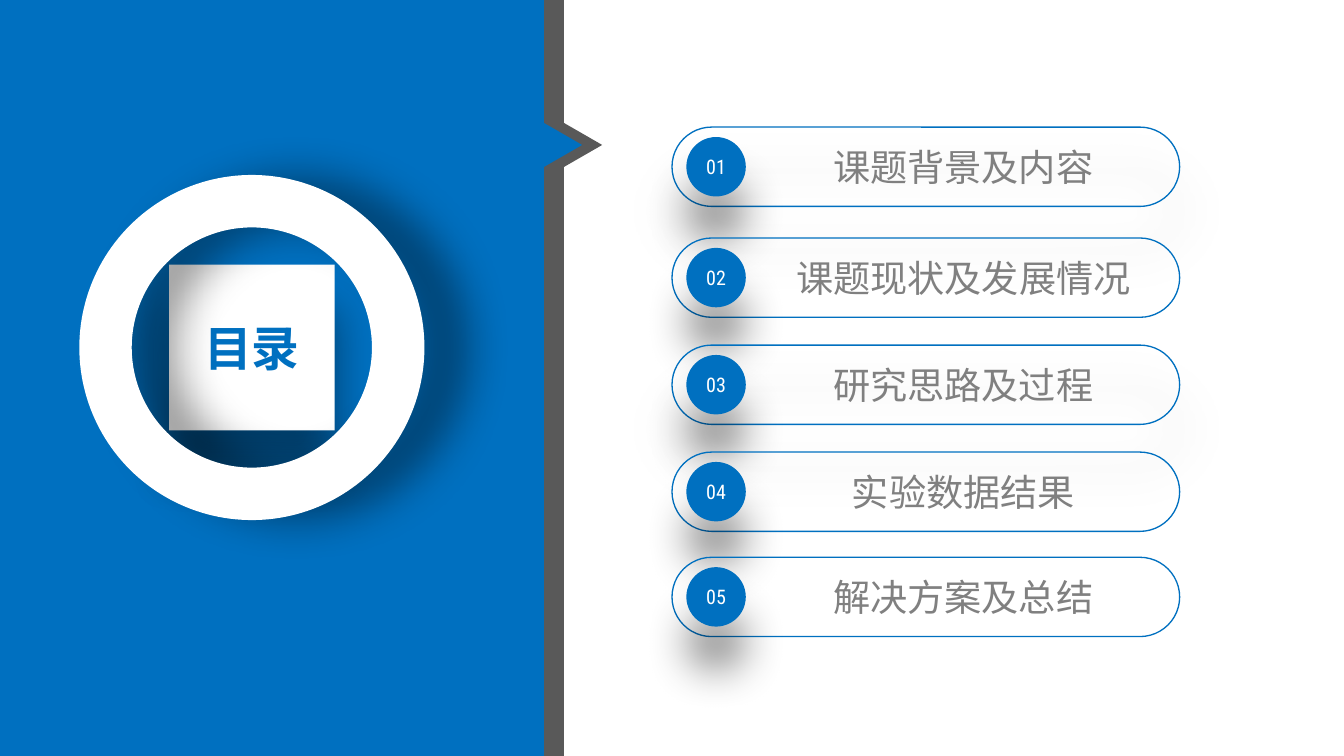
import dataclasses

import lxml.etree
import pptx
import pptx.dml.color
import pptx.enum.shapes
import pptx.enum.text
import pptx.oxml
import pptx.oxml.ns
import pptx.util

SHAPE = pptx.enum.shapes.MSO_SHAPE
WIDTH, HEIGHT = 14.06, 7.91
COLUMNS = 100  # the grid has square cells, so a row is as high as a column is wide
ROWS = COLUMNS * HEIGHT / WIDTH


@dataclasses.dataclass(frozen=True)
class Theme:
    blue: str = "0070C0"
    dark: str = "595959"
    gray: str = "808080"
    white: str = "FFFFFF"
    font: str = "Roboto Condensed"
    title_size: float = 36
    item_size: float = 28
    badge_size: float = 15.1
    line_width: float = 1
    shadow_reach: float = 33


THEME = Theme()

# label, top row of its pill, whether the pill has a shadow
ITEMS = [
    ("课题背景及内容", 9.46, True),
    ("课题现状及发展情况", 17.71, False),
    ("研究思路及过程", 25.68, True),
    ("实验数据结果", 33.64, False),
    ("解决方案及总结", 41.47, False),
]


def cells(n):
    return pptx.util.Inches(n * WIDTH / COLUMNS)


def rgb(color):
    return pptx.dml.color.RGBColor.from_string(color)


def add_shape(slide, kind, box, fill=None, line=None):
    sp = slide.shapes.add_shape(kind, *map(cells, box))
    sp.shadow.inherit = False
    if fill:
        sp.fill.solid()
        sp.fill.fore_color.rgb = rgb(fill)
    else:
        sp.fill.background()
    if line:
        sp.line.color.rgb = rgb(line)
        sp.line.width = pptx.util.Pt(THEME.line_width)
    else:
        sp.line.fill.background()
    return sp


def add_shadow(sp, angle=90, opacity=43):
    sp.shadow.inherit = False
    effects = sp.element.spPr.find(pptx.oxml.ns.qn("a:effectLst"))
    reach = pptx.util.Pt(THEME.shadow_reach)
    effects.append(pptx.oxml.parse_xml(
        f'<a:outerShdw {pptx.oxml.ns.nsdecls("a")} blurRad="{reach}" dist="{reach}" '
        f'dir="{angle * 60000}" algn="ctr" rotWithShape="0"><a:srgbClr val="000000">'
        f'<a:alpha val="{opacity * 1000}"/></a:srgbClr></a:outerShdw>'))


def write(sp, text, size, color, bold=False, margin_x=0.08, margin_y=0.04):
    tf = sp.text_frame
    tf.word_wrap = True
    tf.auto_size = pptx.enum.text.MSO_AUTO_SIZE.NONE
    tf.vertical_anchor = pptx.enum.text.MSO_ANCHOR.MIDDLE
    tf.margin_left = tf.margin_right = pptx.util.Inches(margin_x)
    tf.margin_top = tf.margin_bottom = pptx.util.Inches(margin_y)
    p = tf.paragraphs[0]
    p.text = text
    p.alignment = pptx.enum.text.PP_ALIGN.CENTER
    p.font.name = THEME.font
    p.font.size = pptx.util.Pt(size)
    p.font.bold = bold
    p.font.color.rgb = rgb(color)


def add_item(slide, box, number, label, has_shadow):
    """Pill with a numbered badge at its left end and a label."""
    left, top, width, height = box
    pill = add_shape(slide, SHAPE.ROUNDED_RECTANGLE, box, line=THEME.blue)
    pill.adjustments[0] = 0.5
    if has_shadow:
        add_shadow(pill)

    badge_side = 0.75 * height
    badge_top = top + 0.125 * height
    badge = add_shape(slide, SHAPE.OVAL,
                      (left + 1.07, badge_top, badge_side, badge_side), THEME.blue)
    add_shadow(badge)
    write(badge, f"{number:02d}", THEME.badge_size, THEME.white)

    label_box = (left + 8.46, badge_top, 0.7 * width, badge_side)
    tb = slide.shapes.add_textbox(*map(cells, label_box))
    write(tb, label, THEME.item_size, THEME.gray, margin_x=0, margin_y=0)


def add_panel(slide, box, color):
    """Full-height panel with a pointer on its right edge."""
    left, top, width, height = box
    pointer = add_shape(slide, SHAPE.ISOSCELES_TRIANGLE,
                        (left + width - 0.21, top + 9.37, 3.27, 2.84), color)
    pointer.rotation = 90
    add_shape(slide, SHAPE.RECTANGLE, box, color)


def add_medallion(slide, box, text):
    """Slide title in a disc, with a ring around it."""
    left, top, side, _ = box
    disc = 0.48 * side
    inset = (side - disc) / 2
    title = slide.shapes.title
    title.left, title.top = cells(left + inset), cells(top + inset)
    title.width = title.height = cells(disc)
    geometry = lxml.etree.SubElement(title.element.spPr, pptx.oxml.ns.qn("a:prstGeom"),
                                     prst="ellipse")
    lxml.etree.SubElement(geometry, pptx.oxml.ns.qn("a:avLst"))
    title.fill.solid()
    title.fill.fore_color.rgb = rgb(THEME.white)
    add_shadow(title)
    write(title, text, THEME.title_size, THEME.blue, bold=True)
    slide.shapes.element.append(title.element)  # in front of the panels

    ring = add_shape(slide, SHAPE.DONUT, box, THEME.white)
    ring.adjustments[0] = 0.152
    add_shadow(ring, angle=0, opacity=40)


def main():
    prs = pptx.Presentation()
    prs.slide_width = pptx.util.Inches(WIDTH)
    prs.slide_height = pptx.util.Inches(HEIGHT)
    slide = prs.slides.add_slide(prs.slide_layouts[5])

    for number, (label, top, has_shadow) in enumerate(ITEMS, 1):
        add_item(slide, (50, top, 37.77, 5.9), number, label, has_shadow)
    for left, color in ((1.49, THEME.dark), (0, THEME.blue)):
        add_panel(slide, (left, 0, 40.47, ROWS), color)
    add_medallion(slide, (5.9, 13.02, 25.68, 25.68), "目录")

    prs.save("out.pptx")


if __name__ == "__main__":
    main()
